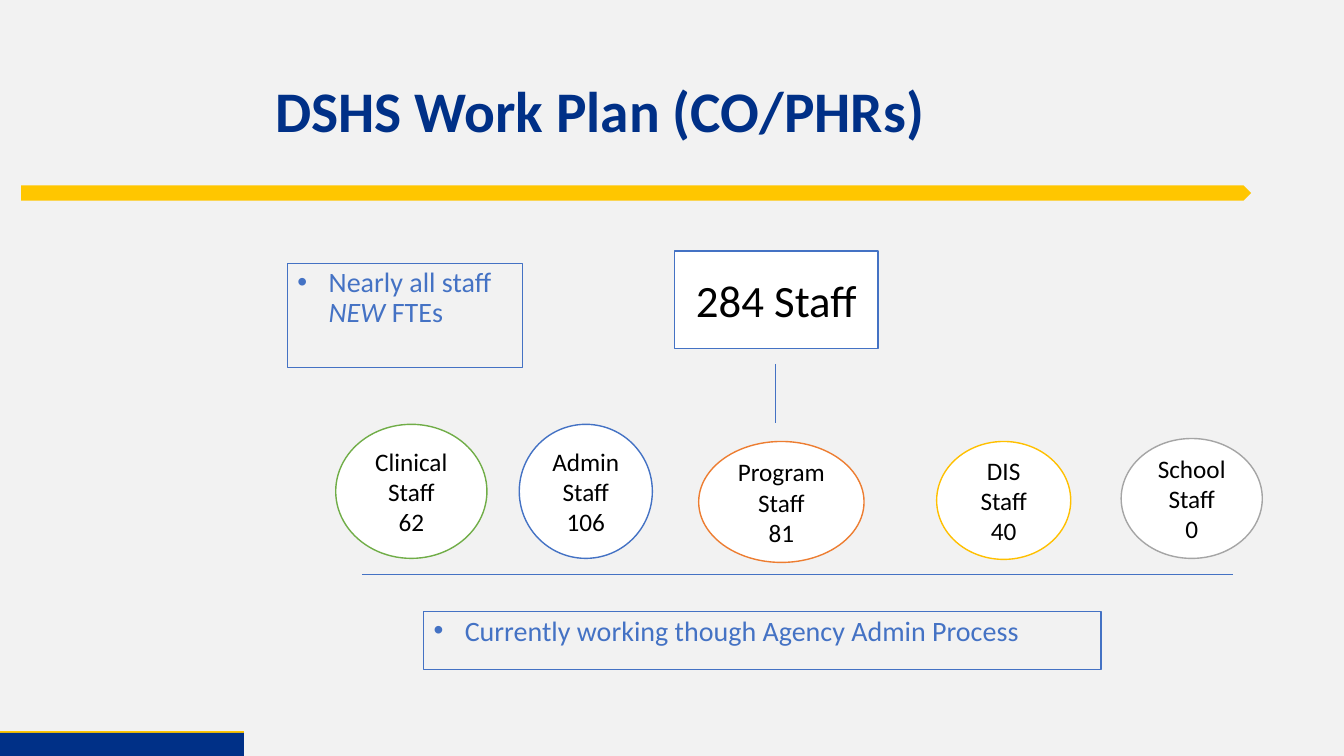
from lxml.etree import SubElement
from pptx import Presentation
from pptx.dml.color import RGBColor
from pptx.enum.shapes import MSO_CONNECTOR, MSO_SHAPE
from pptx.enum.text import MSO_ANCHOR, MSO_AUTO_SIZE, PP_ALIGN
from pptx.oxml.ns import qn
from pptx.util import Pt

PX = 9144
COLORS = {
    "bg": "F2F2F2", "gold": "FFC600", "navy": "003087", "white": "FFFFFF",
    "black": "000000", "blue": "4472C4", "green": "70AD47",
    "orange": "ED7D31", "amber": "FFC000", "gray": "A5A5A5",
}
STAFF = [
    (["Clinical", "Staff", "62"], (333, 421, 150, 133), "green"),
    (["Admin", "Staff", "106"], (515, 421, 132, 133), "blue"),
    (["Program", "Staff", "81"], (693, 438, 164, 120), "orange"),
    (["DIS", "Staff", "40"], (929, 438, 133, 117), "amber"),
    (["School", "Staff", "0"], (1112, 435, 140, 119), "gray"),
]


def rgb(name):
    return RGBColor.from_string(COLORS[name])


def emu(box):
    return [v * PX for v in box]


def place(sp, box):
    sp.left, sp.top, sp.width, sp.height = emu(box)


def add_text(p, text, size=18, color="black", bold=False, italic=False):
    r = p.add_run()
    r.text = text
    r.font.name = "Calibri"
    r.font.size = Pt(size)
    r.font.color.rgb = rgb(color)
    r.font.bold = bold
    r.font.italic = italic


def add_shape(s, kind, box, fill, line=None):
    sp = s.shapes.add_shape(kind, *emu(box))
    sp.shadow.inherit = False
    sp.fill.solid()
    sp.fill.fore_color.rgb = rgb(fill)
    if line:
        sp.line.color.rgb = rgb(line)
        sp.line.width = Pt(1)
    else:
        sp.line.fill.background()
    return sp


def add_line(s, ends, color="blue", width=0.5):
    cx = s.shapes.add_connector(MSO_CONNECTOR.STRAIGHT, *emu(ends))
    cx.line.color.rgb = rgb(color)
    cx.line.width = Pt(width)
    SubElement(cx._element.spPr, qn("a:effectLst"))


def add_frame(s):
    s.background.fill.solid()
    s.background.fill.fore_color.rgb = rgb("bg")
    add_shape(s, MSO_SHAPE.PENTAGON, (21, 184, 1220, 15), "gold")
    add_line(s, (0, 727, 242, 727), "gold", 3)
    add_shape(s, MSO_SHAPE.RECTANGLE, (0, 727, 242, 23), "navy")


def add_title(s, text, box):
    sp = s.shapes.title
    place(sp, box)
    tf = sp.text_frame
    tf.auto_size = MSO_AUTO_SIZE.NONE
    tf.vertical_anchor = MSO_ANCHOR.MIDDLE
    p = tf.paragraphs[0]
    p.alignment = PP_ALIGN.LEFT
    p.line_spacing = 0.9
    add_text(p, text, size=41, color="navy", bold=True)


def add_node(s, kind, lines, box, color, size=18):
    sp = add_shape(s, kind, box, "white", color)
    tf = sp.text_frame
    tf.vertical_anchor = MSO_ANCHOR.MIDDLE
    for i, line in enumerate(lines):
        p = tf.add_paragraph() if i else tf.paragraphs[0]
        p.alignment = PP_ALIGN.CENTER
        add_text(p, line, size=size)


def add_note(sp, runs, box):
    place(sp, box)
    sp.line.color.rgb = rgb("blue")
    sp.line.width = Pt(0.75)
    tf = sp.text_frame
    tf.word_wrap = True
    tf.auto_size = MSO_AUTO_SIZE.SHAPE_TO_FIT_TEXT
    p = tf.paragraphs[0]
    p.line_spacing = 0.9
    p.space_before = Pt(0)
    pPr = p._p.get_or_add_pPr()
    pPr.set("marL", str(31 * PX))
    pPr.set("indent", str(-31 * PX))
    SubElement(pPr, qn("a:buFont"), typeface="Arial")
    SubElement(pPr, qn("a:buChar"), char="•")
    for text, italic in runs:
        add_text(p, text, size=20, color="blue", italic=italic)


def add_staff_chart(s):
    add_node(s, MSO_SHAPE.RECTANGLE, ["284 Staff"], (669, 249, 202, 97), "blue", 32)
    for lines, box, color in STAFF:
        add_node(s, MSO_SHAPE.OVAL, lines, box, color)
    add_line(s, (359, 570, 1223, 570))
    add_line(s, (769, 361, 769, 420))


def main():
    prs = Presentation()
    prs.slide_width, prs.slide_height = emu((1333, 750))
    s = prs.slides.add_slide(prs.slide_layouts[3])
    add_frame(s)
    add_title(s, "DSHS Work Plan (CO/PHRs)", (263, 40, 1036, 147))
    add_staff_chart(s)
    add_note(s.placeholders[1],
             [("Nearly all staff ", False), ("NEW ", True), ("FTEs", False)],
             (285, 261, 233, 71))
    add_note(s.placeholders[2],
             [("Currently working though Agency Admin Process", False)],
             (420, 607, 672, 40))
    prs.save("out.pptx")


if __name__ == "__main__":
    main()
